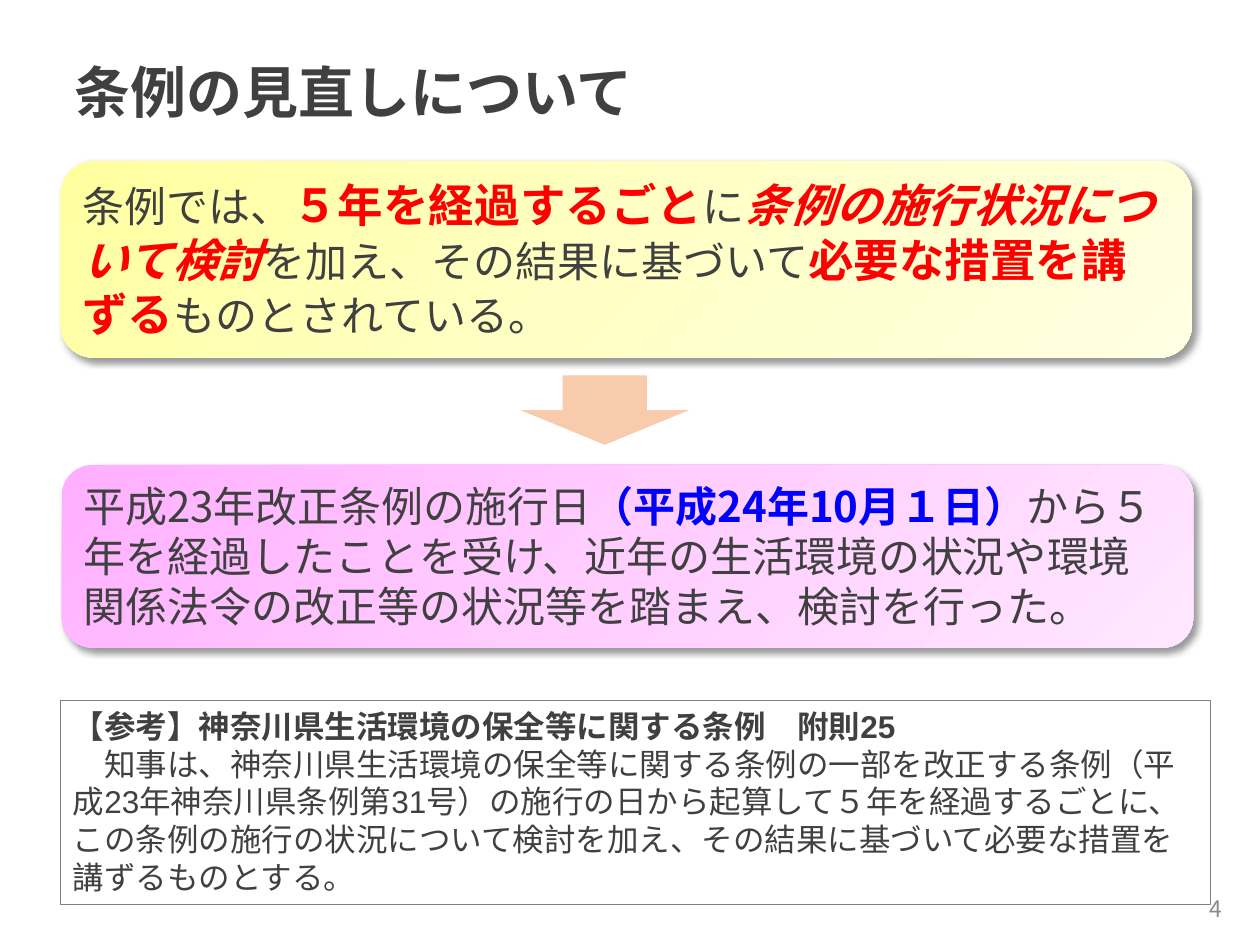
"""Build the slide on the periodic review of the ordinance."""
from dataclasses import dataclass

from lxml import etree
from pptx import Presentation
from pptx import util as u
from pptx.dml.color import RGBColor
from pptx.enum import shapes, text
from pptx.oxml.ns import qn


@dataclass(frozen=True)
class Theme:
    """Colours, fonts and type sizes."""
    ink: str = "404040"
    red: str = "FF0000"
    blue: str = "0000FF"
    number: str = "8C8C8C"
    frame: str = "808080"
    paper: str = "FFFFFF"
    arrow: str = "F8CBAD"
    yellow: tuple[str, ...] = ("FFFFA0", "FFFFC5", "FFFFE3")
    pink: tuple[str, ...] = ("FFAFFF", "FFCEFF", "FFE7FF")
    sans: str = "Noto Sans CJK JP"
    latin: str = "Arial"
    title: int = 32
    strong: int = 26
    body: int = 24
    note: int = 18
    small: int = 13


T = Theme()


@dataclass(frozen=True)
class Run:
    """A piece of text and its format."""
    words: str
    size: int = T.body
    color: str = T.ink
    bold: bool = False
    italic: bool = False
    font: str = T.sans


@dataclass(frozen=True)
class Box:
    """Place and size in inches."""
    left: float
    top: float
    width: float
    height: float

    def lengths(self) -> list[u.Length]:
        """Return the four values as lengths."""
        return [u.Inches(v) for v in (self.left, self.top, self.width, self.height)]


@dataclass(frozen=True)
class Card:
    """A rounded panel with a gradient and its runs."""
    box: Box
    stops: tuple[str, ...]
    runs: list[Run]


def red(words: str, italic: bool = False) -> Run:
    """Return a run stressed in red."""
    return Run(words, T.strong, T.red, True, italic)


CARDS = [
    Card(Box(0.48, 1.28, 8.98, 1.56), T.yellow, [
        Run("条例では、"), red("５年を経過するごと"), Run("に"),
        red("条例の施行状況について検討", italic=True),
        Run("を加え、その結果に基づいて"), red("必要な措置を講ずる"),
        Run("ものとされている。")]),
    Card(Box(0.49, 3.69, 8.98, 1.45), T.pink, [
        Run("平成23年改正条例の施行日"),
        Run("（平成24年10月１日）", color=T.blue, bold=True),
        Run("から５年を経過したことを受け、近年の生活環境の状況や環境関係法令の"
            "改正等の状況等を踏まえ、検討を行った。")]),
]
NOTE = [
    [Run("【参考】神奈川県生活環境の保全等に関する条例　附則25",
         T.note, bold=True, font=T.latin)],
    [Run("　知事は、神奈川県生活環境の保全等に関する条例の一部を改正する条例"
         "（平成23年神奈川県条例第31号）の施行の日から起算して５年を経過するごとに、"
         "この条例の施行の状況について検討を加え、その結果に基づいて必要な措置を"
         "講ずるものとする。", T.note, font=T.latin)],
]


def write(sp, paragraphs: list[list[Run]], *, align=text.PP_ALIGN.LEFT,
          anchor=text.MSO_ANCHOR.TOP, grow: bool = True) -> None:
    """Fill a shape with formatted paragraphs."""
    tf = sp.text_frame
    tf.word_wrap = True
    tf.vertical_anchor = anchor
    if grow:
        tf.auto_size = text.MSO_AUTO_SIZE.SHAPE_TO_FIT_TEXT
    for i, runs in enumerate(paragraphs):
        p = tf.add_paragraph() if i else tf.paragraphs[0]
        p.alignment = align
        for run in runs:
            r = p.add_run()
            r.text = run.words
            r.font.size = u.Pt(run.size)
            r.font.bold, r.font.italic = run.bold, run.italic
            r.font.color.rgb = RGBColor.from_string(run.color)
            r.font.name = run.font
            etree.SubElement(r.font._element, qn("a:ea"), typeface=T.sans)


def add_shape(s, kind, box: Box, fill: str | None = None, line: str | None = None):
    """Add a preset shape without shadow."""
    sp = s.shapes.add_shape(kind, *box.lengths())
    sp.shadow.inherit = False
    if fill:
        sp.fill.solid()
        sp.fill.fore_color.rgb = RGBColor.from_string(fill)
    if line:
        sp.line.color.rgb = RGBColor.from_string(line)
        sp.line.width = u.Pt(0.75)
    else:
        sp.line.fill.background()
    return sp


def add_color(parent, color: str, alpha: int = 100) -> None:
    """Append an RGB colour with its opacity in percent."""
    clr = etree.SubElement(parent, qn("a:srgbClr"), val=color)
    if alpha < 100:
        etree.SubElement(clr, qn("a:alpha"), val=str(alpha * 1000))


def add_card(s, card: Card) -> None:
    """Add a rounded gradient panel with a soft shadow."""
    sp = add_shape(s, shapes.MSO_SHAPE.ROUNDED_RECTANGLE, card.box)
    sp.fill.gradient()
    sp.fill.gradient_angle = 315
    stops = sp._element.spPr.find(".//" + qn("a:gsLst"))
    for old in list(stops):
        stops.remove(old)
    for i, color in enumerate(card.stops):
        pos = 100000 * i // (len(card.stops) - 1)
        add_color(etree.SubElement(stops, qn("a:gs"), pos=str(pos)), color)
    effects = sp._element.spPr.find(qn("a:effectLst"))
    shadow = etree.SubElement(
        effects, qn("a:outerShdw"), blurRad=str(u.Pt(4)), dist=str(u.Pt(3)),
        dir=str(45 * 60000), algn="tl", rotWithShape="0")
    add_color(shadow, "000000", 40)
    write(sp, [card.runs])


def main() -> None:
    """Build and save the slide."""
    prs = Presentation()
    prs.slide_width, prs.slide_height = u.Inches(10), u.Inches(7.5)
    s = prs.slides.add_slide(prs.slide_layouts[6])
    number = s.shapes.add_textbox(*Box(7.55, 7.01, 2.25, 0.4).lengths())
    write(number, [[Run("4", T.small, T.number)]], align=text.PP_ALIGN.RIGHT,
          anchor=text.MSO_ANCHOR.MIDDLE, grow=False)
    note = add_shape(s, shapes.MSO_SHAPE.RECTANGLE, Box(0.48, 5.56, 9.13, 1.62),
                     T.paper, T.frame)
    write(note, NOTE)
    title = s.shapes.add_textbox(*Box(0.49, 0.41, 5.51, 0.64).lengths())
    write(title, [[Run("条例の見直しについて", T.title, bold=True)]])
    for card in CARDS:
        add_card(s, card)
    add_shape(s, shapes.MSO_SHAPE.DOWN_ARROW, Box(4.13, 2.98, 1.34, 0.55), T.arrow)
    prs.save("out.pptx")


if __name__ == "__main__":
    main()
